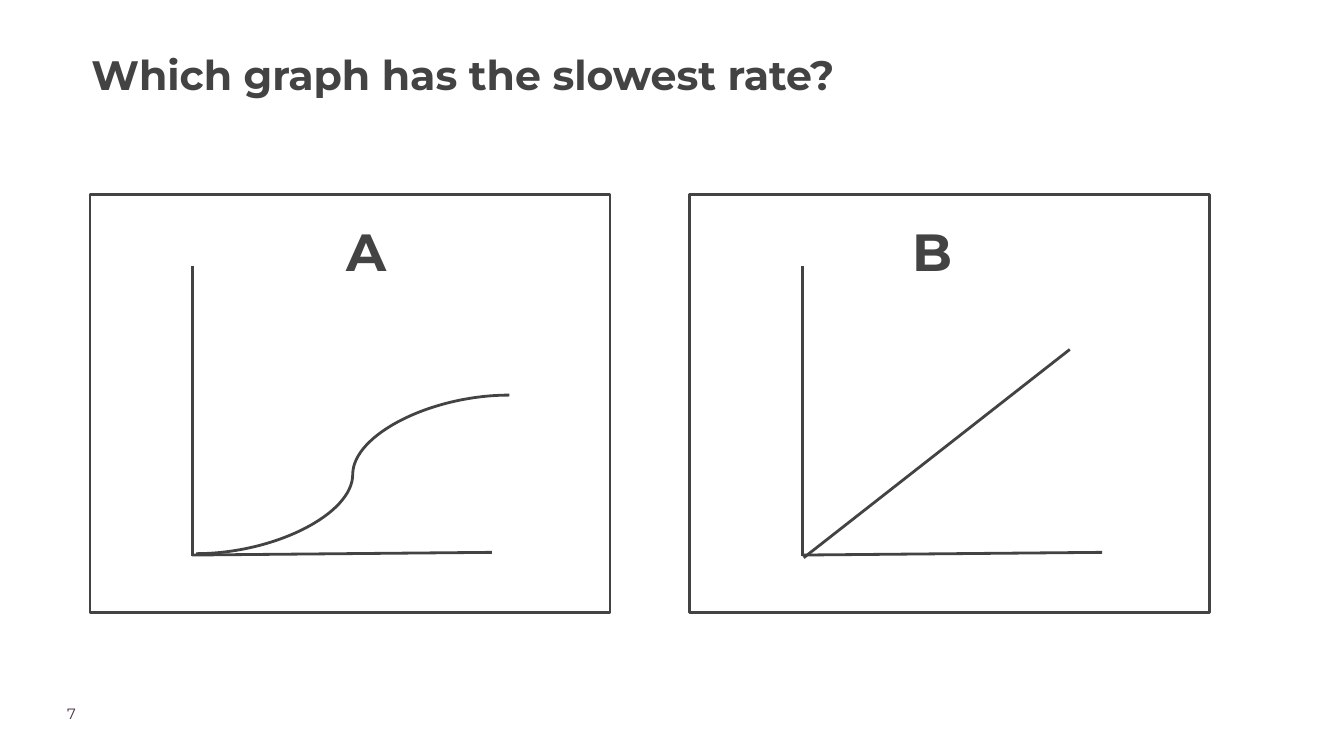
from lxml import etree
from pptx import Presentation
from pptx.dml.color import RGBColor
from pptx.enum import shapes, text
from pptx.oxml import ns
from pptx.util import Inches, Pt

HUES = {"ink": "434343", "page": "4B3241", "white": "FFFFFF"}
FONT = "Montserrat"
TITLE = "Which graph has the slowest rate?"
PAGE = "7"
STRAIGHT = shapes.MSO_CONNECTOR.STRAIGHT
CURVE = shapes.MSO_CONNECTOR.CURVE
WIDE = 10
PANEL = (1.45, 3.87, 3.11)
GRAPHS = [
    {"name": "A", "left": 0.67, "label": 2.53, "axis": 1.43,
     "kind": CURVE, "plot": (1.46, 4.12, 3.79, 2.94)},
    {"name": "B", "left": 5.13, "label": 6.74, "axis": 5.97,
     "kind": STRAIGHT, "plot": (5.98, 4.15, 7.96, 2.6)},
]


def hue(name):
    return RGBColor.from_string(HUES[name])


def write(box, words, size, color, bold=False, inset=0, space=None):
    frame = box.text_frame
    frame.word_wrap = True
    frame.auto_size = text.MSO_AUTO_SIZE.NONE
    frame.vertical_anchor = text.MSO_ANCHOR.TOP
    frame.margin_left = frame.margin_right = Inches(inset)
    frame.margin_top = frame.margin_bottom = Inches(inset)
    para = frame.paragraphs[0]
    para.alignment = text.PP_ALIGN.LEFT
    if space:
        para.line_spacing = space
    run = para.add_run()
    run.text = words
    run.font.name = FONT
    run.font.size = Pt(size)
    run.font.bold = bold
    run.font.color.rgb = hue(color)


def stroke(item):
    item.line.color.rgb = hue("ink")
    item.line.width = Pt(1.5)


def link(slide, kind, ends):
    line = slide.shapes.add_connector(kind, *map(Inches, ends))
    stroke(line)
    etree.SubElement(line._element.spPr, ns.qn("a:effectLst"))


def label(slide, place, *args, **style):
    write(slide.shapes.add_textbox(*map(Inches, place)), *args, **style)


def draw(slide, graph):
    top, width, height = PANEL
    panel = slide.shapes.add_shape(
        shapes.MSO_SHAPE.RECTANGLE,
        *map(Inches, (graph["left"], top, width, height)))
    panel.shadow.inherit = False
    panel.fill.solid()
    panel.fill.fore_color.rgb = hue("white")
    stroke(panel)
    axis = graph["axis"]
    link(slide, STRAIGHT, (axis, 1.98, axis, 4.14))
    link(slide, STRAIGHT, (axis, 4.13, axis + 2.23, 4.11))
    label(slide, (graph["label"], 1.58, 0.66, 0.51),
          graph["name"], 28, "ink", bold=True, inset=0.05)
    link(slide, graph["kind"], graph["plot"])


def main():
    deck = Presentation()
    deck.slide_width = Inches(WIDE)
    deck.slide_height = Inches(WIDE * 9 / 16)
    slide = deck.slides.add_slide(deck.slide_layouts[5])
    title = slide.shapes.title
    title.left, title.top = Inches(0.68), Inches(0.31)
    title.width, title.height = Inches(9), Inches(0.89)
    write(title, TITLE, 22, "ink", bold=True, space=1.15)
    label(slide, (0.5, 5.24, 0.79, 0.2), PAGE, 8, "page")
    for graph in GRAPHS:
        draw(slide, graph)
    deck.save("out.pptx")


if __name__ == "__main__":
    main()
